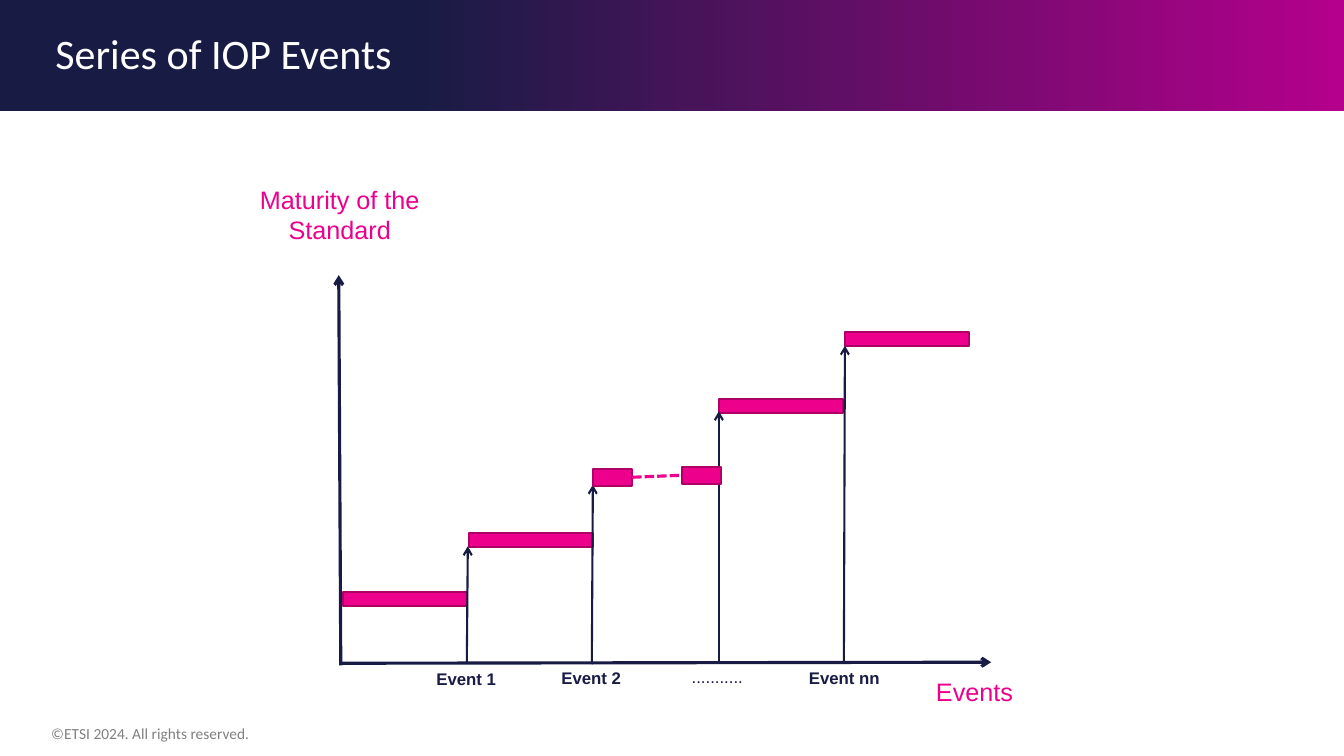
from dataclasses import dataclass

from lxml.etree import SubElement
from pptx import Presentation
from pptx.dml.color import RGBColor
from pptx.enum.dml import MSO_LINE
from pptx.enum.shapes import MSO_CONNECTOR, MSO_SHAPE
from pptx.enum.text import MSO_ANCHOR, MSO_AUTO_SIZE, PP_ALIGN
from pptx.oxml.ns import qn
from pptx.util import Inches, Pt


@dataclass(frozen=True)
class Theme:
    """Colours, fonts and type sizes of the slide."""
    navy: RGBColor = RGBColor(0x18, 0x1C, 0x44)
    purple: RGBColor = RGBColor(0xB4, 0x00, 0x8C)
    pink: RGBColor = RGBColor(0xEC, 0x00, 0x8C)
    edge: RGBColor = RGBColor(0xAF, 0x00, 0x68)
    grey: RGBColor = RGBColor(0x80, 0x80, 0x80)
    white: RGBColor = RGBColor(0xFF, 0xFF, 0xFF)
    heading: str = "Calibri"
    body: str = "Arial"
    title_size: int = 30
    axis_size: int = 18
    event_size: int = 12
    footer_size: int = 11


THEME = Theme()

EVENTS = [
    ("Event 1", 4.14, 6.59, (4.63, 6.57), (4.64, 5.42)),
    ("Event 2", 5.38, 6.58, (5.87, 6.59), (5.88, 4.81)),
    ("...........", 6.63, 6.57, (7.13, 6.56), (7.13, 4.08)),
    ("Event nn", 7.89, 6.58, (8.37, 6.58), (8.38, 3.43)),
]
STEPS = [(3.4, 5.87), (4.65, 5.29), (7.13, 3.96), (8.38, 3.29)]


def set_font(p, name, size, color, bold=False):
    """Format a whole paragraph."""
    p.font.name = name
    p.font.size = Pt(size)
    p.font.color.rgb = color
    p.font.bold = bold


def add_band(slide):
    """Draw the gradient title band behind the title."""
    sp = slide.shapes.add_shape(MSO_SHAPE.RECTANGLE, 0, 0, Inches(13.33), Inches(1.1))
    sp.shadow.inherit = False
    sp.line.fill.background()
    sp.fill.gradient()
    sp.fill.gradient_angle = 180
    stops = [(0, THEME.purple), (0.69, THEME.navy)]
    for stop, (position, color) in zip(sp.fill.gradient_stops, stops):
        stop.position = position
        stop.color.rgb = color
    slide.shapes.title.element.addprevious(sp.element)


def add_title(slide, text):
    """Place and format the title placeholder."""
    sp = slide.shapes.title
    sp.left, sp.top, sp.width, sp.height = map(Inches, (0.43, 0.24, 9.31, 0.62))
    tf = sp.text_frame
    tf.text = text
    tf.auto_size = MSO_AUTO_SIZE.NONE
    tf.vertical_anchor = MSO_ANCHOR.MIDDLE
    tf.margin_left = tf.margin_right = Inches(0.12)
    tf.margin_top = tf.margin_bottom = Inches(0.06)
    p = tf.paragraphs[0]
    p.alignment = PP_ALIGN.LEFT
    p.line_spacing = 0.9
    set_font(p, THEME.heading, THEME.title_size, THEME.white)


def add_label(slide, text, box, size, color, name=THEME.body, bold=False,
              align=PP_ALIGN.CENTER, anchor=MSO_ANCHOR.TOP):
    """Add a wrapped one-paragraph text box."""
    tf = slide.shapes.add_textbox(*map(Inches, box)).text_frame
    tf.word_wrap = True
    tf.vertical_anchor = anchor
    tf.text = text
    p = tf.paragraphs[0]
    p.alignment = align
    set_font(p, name, size, color, bold)


def add_bar(slide, left, top, width=1.23, height=0.14):
    """Add one pink step of the staircase."""
    sp = slide.shapes.add_shape(
        MSO_SHAPE.RECTANGLE, *map(Inches, (left, top, width, height)))
    sp.shadow.inherit = False
    sp.fill.solid()
    sp.fill.fore_color.rgb = THEME.pink
    sp.line.color.rgb = THEME.edge
    sp.line.width = Pt(1.5)
    return sp


def add_line(slide, start, end, width, color=THEME.navy, arrow=True):
    """Add a straight line, with an arrowhead at its end if asked."""
    line = slide.shapes.add_connector(
        MSO_CONNECTOR.STRAIGHT, *map(Inches, (*start, *end)))
    line.line.color.rgb = color
    line.line.width = Pt(width)
    if arrow:
        SubElement(line.line._get_or_add_ln(), qn("a:tailEnd"), type="arrow")
    SubElement(line.element.spPr, qn("a:effectLst"))
    return line


def add_broken_step(slide):
    """Add the two short bars joined by a dashed line."""
    right = add_bar(slide, 6.76, 4.63, 0.39, 0.17)
    left = add_bar(slide, 5.88, 4.65, 0.39, 0.17)
    dash = add_line(slide, (6.27, 4.73), (6.76, 4.72), 2.25, THEME.pink, arrow=False)
    dash.line.dash_style = MSO_LINE.SQUARE_DOT
    dash.begin_connect(left, 3)
    dash.end_connect(right, 1)


def add_axes(slide):
    """Add both axes with their names."""
    add_line(slide, (3.38, 6.6), (3.36, 2.73), 2.25)
    add_line(slide, (3.38, 6.58), (9.83, 6.57), 2.25)
    for text, box in [("Maturity of the Standard", (2.21, 1.78, 2.32, 0.71)),
                      ("Events", (8.84, 6.66, 1.65, 0.4))]:
        add_label(slide, text, box, THEME.axis_size, THEME.pink)


def main():
    """Build the slide and save it."""
    prs = Presentation()
    prs.slide_width, prs.slide_height = Inches(13.33), Inches(7.5)
    slide = prs.slides.add_slide(prs.slide_layouts[5])
    add_band(slide)
    add_title(slide, "Series of IOP Events")
    add_label(slide, "©ETSI 2024. All rights reserved.", (0.41, 7.13, 2.41, 0.29),
              THEME.footer_size, THEME.grey, THEME.heading,
              align=PP_ALIGN.LEFT, anchor=MSO_ANCHOR.BOTTOM)
    add_axes(slide)
    for left, top in STEPS:
        add_bar(slide, left, top)
    for text, left, top, foot, tip in EVENTS:
        add_line(slide, foot, tip, 1.5)
        add_label(slide, text, (left, top, 0.97, 0.3), THEME.event_size,
                  THEME.navy, bold=text.startswith("Event"))
    add_broken_step(slide)
    prs.save("out.pptx")


if __name__ == "__main__":
    main()
